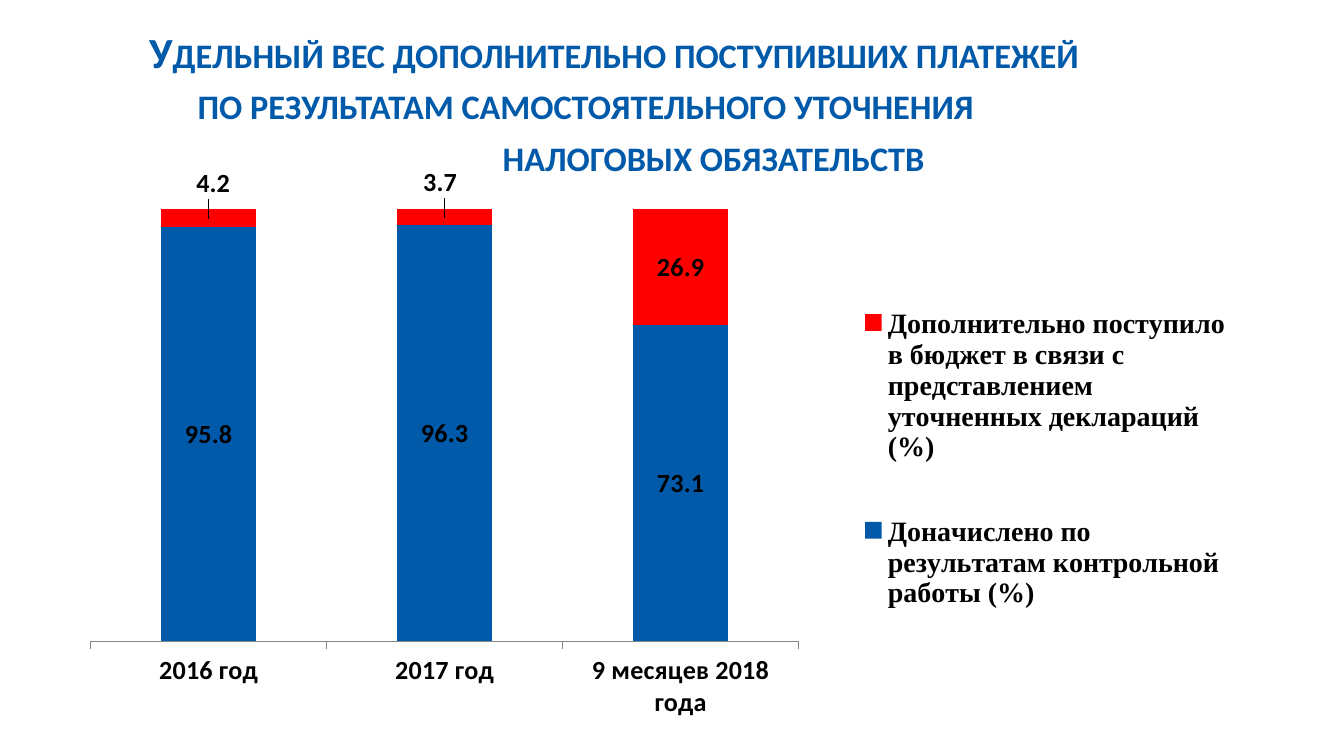
from dataclasses import dataclass

from lxml import etree
from pptx import Presentation
from pptx.chart.data import CategoryChartData
from pptx.dml.color import RGBColor
from pptx.enum.chart import XL_CHART_TYPE, XL_LABEL_POSITION, XL_LEGEND_POSITION, XL_TICK_MARK
from pptx.enum.text import MSO_ANCHOR, MSO_AUTO_SIZE, PP_ALIGN
from pptx.oxml.ns import qn
from pptx.util import Inches, Pt

STACKED = XL_CHART_TYPE.COLUMN_STACKED
CENTER = XL_LABEL_POSITION.CENTER
RIGHT = XL_LEGEND_POSITION.RIGHT
OUTSIDE, NO_TICK = XL_TICK_MARK.OUTSIDE, XL_TICK_MARK.NONE
MIDDLE = MSO_ANCHOR.MIDDLE
NO_FIT = MSO_AUTO_SIZE.NONE
LEFT = PP_ALIGN.LEFT
C15 = "http://schemas.microsoft.com/office/drawing/2012/chart"
LABEL_EXT = "{CE6537A1-D6FC-4f65-9D91-7224C49458BB}"


@dataclass(frozen=True)
class Theme:
    blue: RGBColor = RGBColor(0x00, 0x5A, 0xA9)
    red: RGBColor = RGBColor(0xFF, 0x00, 0x00)
    black: RGBColor = RGBColor(0x00, 0x00, 0x00)
    gray: RGBColor = RGBColor(0x86, 0x86, 0x86)
    sans: str = "Calibri"
    serif: str = "Times New Roman"
    head: int = 23
    base: int = 18
    label: int = 14
    key: int = 15


THEME = Theme()
TITLE = [
    ("Удельный вес дополнительно поступивших платежей", 0.19),
    ("по результатам самостоятельного уточнения", 0.55),
    ("налоговых обязательств", 2.82),
]
YEARS = ["2016 год", "2017 год", "9 месяцев 2018 года"]
SERIES = [
    ("Доначислено по результатам контрольной работы (%)", [95.8, 96.3, 73.1], THEME.blue),
    ("Дополнительно поступило в бюджет в связи с представлением уточненных деклараций (%)",
     [4.2, 3.7, 26.9], THEME.red),
]
SHIFTS = [0.004, -0.004]


def style(font, size, name=THEME.sans, color=THEME.black, bold=True):
    font.size = Pt(size)
    font.name = name
    font.bold = bold
    font.color.rgb = color


def add_text(para, text, indent=0, caps=False, **form):
    para.alignment = LEFT
    props = para._p.get_or_add_pPr()
    props.set("marL", str(Inches(indent)))
    props.set("indent", "0")
    run = para.add_run()
    run.text = text
    style(run.font, **form)
    if caps:
        run._r.get_or_add_rPr().set("cap", "small")


def add_title(slide):
    title = slide.shapes.title
    title.left, title.top = Inches(0.83), Inches(0.61)
    title.width, title.height = Inches(8.98), Inches(0.31)
    frame = title.text_frame
    frame.word_wrap = True
    frame.auto_size = NO_FIT
    frame.vertical_anchor = MIDDLE
    frame.margin_left = frame.margin_right = Inches(0.09)
    frame.margin_top = frame.margin_bottom = Inches(0.04)
    for i, (text, indent) in enumerate(TITLE):
        para = frame.add_paragraph() if i else frame.paragraphs[0]
        add_text(para, text, indent, caps=True, size=THEME.head, color=THEME.blue)


def set_layout(parent, index, **parts):
    for old in parent.findall(qn("c:layout")):
        parent.remove(old)
    layout = etree.Element(qn("c:layout"))
    manual = etree.SubElement(layout, qn("c:manualLayout"))
    for tag, value in parts.items():
        etree.SubElement(manual, qn(f"c:{tag}")).set("val", str(value))
    parent.insert(index, layout)


def hide_leaders(labels):
    root = labels._element
    for old in root.findall(qn("c:showLeaderLines")):
        root.remove(old)
    exts = etree.SubElement(root, qn("c:extLst"))
    ext = etree.SubElement(exts, qn("c:ext"), uri=LABEL_EXT)
    etree.SubElement(ext, f"{{{C15}}}showLeaderLines", nsmap={"c15": C15}).set("val", "0")


def style_axes(chart):
    axis = chart.category_axis
    axis.major_tick_mark = OUTSIDE
    axis.format.line.color.rgb = THEME.gray
    axis.format.line.width = Pt(0.75)
    style(axis.tick_labels.font, THEME.label)
    scale = chart.value_axis
    scale.minimum_scale, scale.maximum_scale = 0, 120
    scale.has_major_gridlines = False
    scale.major_tick_mark = NO_TICK
    scale.visible = False


def add_key(chart):
    chart.has_legend = True
    key = chart.legend
    key.position = RIGHT
    key.include_in_layout = False
    style(key.font, THEME.key, THEME.serif)
    set_layout(key._element, 1, xMode="edge", yMode="edge", x=0.67, y=0.21, w=0.33, h=0.64)


def style_bars(chart):
    plot = chart.plots[0]
    plot.gap_width, plot.overlap = 150, 100
    plot.vary_by_categories = False
    for bars, (_, _, color) in zip(plot.series, SERIES):
        bars.format.fill.solid()
        bars.format.fill.fore_color.rgb = color
        labels = bars.data_labels
        labels.show_value = True
        labels.position = CENTER
        style(labels.font, THEME.label)
        hide_leaders(labels)
    for i, shift in enumerate(SHIFTS):
        label = plot.series[1].points[i].data_label
        style(label.font, THEME.label)
        label.position = CENTER
        set_layout(label._get_or_add_dLbl(), 1, x=shift, y=-0.055)


def add_chart(slide):
    data = CategoryChartData()
    data.categories = YEARS
    for name, values, _ in SERIES:
        data.add_series(name, values)
    frame = slide.shapes.add_chart(
        STACKED, Inches(0.67), Inches(0.9), Inches(8.53), Inches(4.74), data)
    chart = frame.chart
    chart.has_title = False
    style(chart.font, THEME.base, bold=False)
    style_axes(chart)
    style_bars(chart)
    add_key(chart)
    area = chart._chartSpace.chart.plotArea
    set_layout(area, 0, layoutTarget="inner", xMode="edge", yMode="edge",
               x=0, y=0.003, w=0.618, h=0.814)


def main():
    deck = Presentation()
    deck.slide_width = Inches(10)
    deck.slide_height = Inches(10) * 9 // 16
    slide = deck.slides.add_slide(deck.slide_layouts[5])
    add_title(slide)
    add_chart(slide)
    deck.save("out.pptx")


if __name__ == "__main__":
    main()
